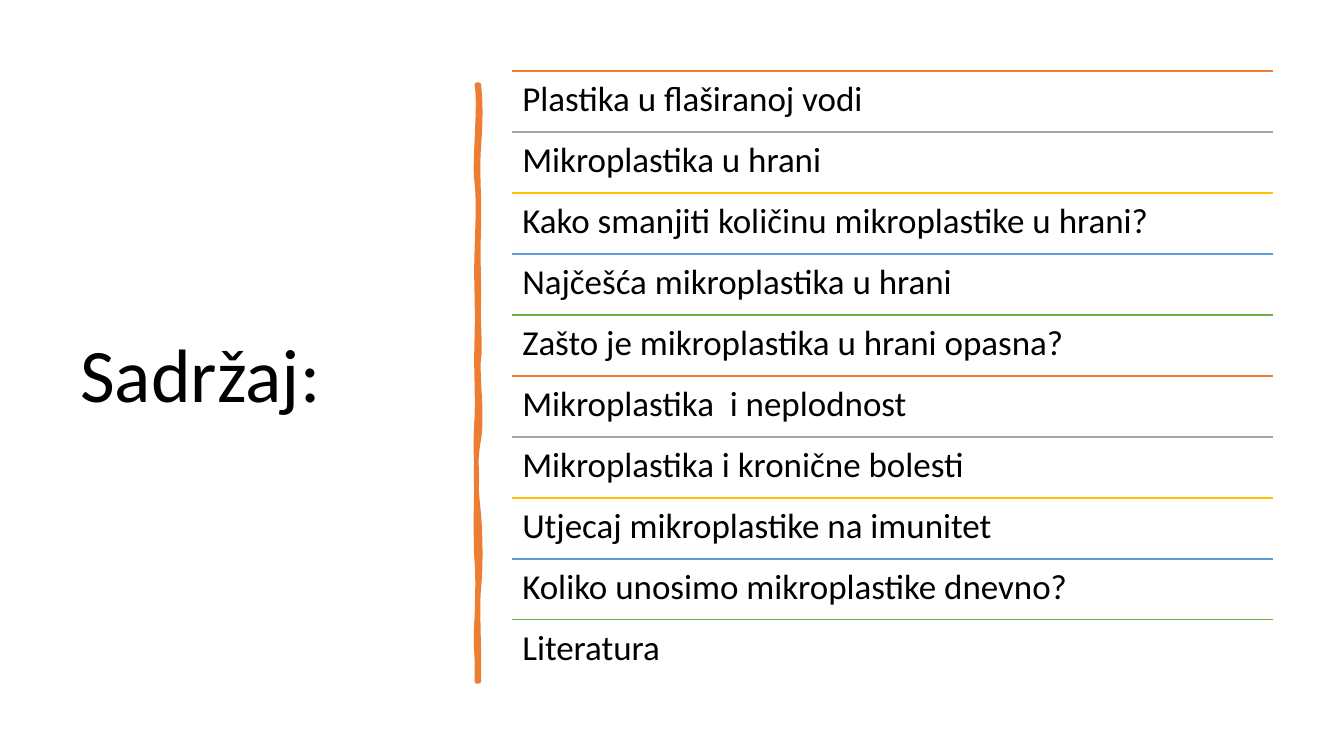
from lxml import etree
from pptx import Presentation
from pptx.dml.color import RGBColor
from pptx.enum.shapes import MSO_CONNECTOR
from pptx.enum.text import MSO_ANCHOR
from pptx.oxml.ns import qn
from pptx.util import Pt

STRAIGHT = MSO_CONNECTOR.STRAIGHT
TOP, MIDDLE = MSO_ANCHOR.TOP, MSO_ANCHOR.MIDDLE
BLACK = RGBColor(0x00, 0x00, 0x00)
ORANGE = RGBColor(0xED, 0x7D, 0x31)
GRAY = RGBColor(0xA5, 0xA5, 0xA5)
GOLD = RGBColor(0xFF, 0xC0, 0x00)
BLUE = RGBColor(0x5B, 0x9B, 0xD5)
GREEN = RGBColor(0x70, 0xAD, 0x47)
RULE_COLORS = [ORANGE, GRAY, GOLD, BLUE, GREEN]

TITLE = "Sadržaj:"
TOPICS = [
    "Plastika u flaširanoj vodi",
    "Mikroplastika u hrani",
    "Kako smanjiti količinu mikroplastike u hrani?",
    "Najčešća mikroplastika u hrani",
    "Zašto je mikroplastika u hrani opasna?",
    "Mikroplastika  i neplodnost",
    "Mikroplastika i kronične bolesti",
    "Utjecaj mikroplastike na imunitet",
    "Koliko unosimo mikroplastike dnevno?",
    "Literatura",
]

LIST_LEFT, LIST_TOP, LIST_W, ROW_H = 366, 50.7, 543.6, 43.56

BAR_START = (342, 60.5)
BAR_CURVES = [
    ((343.4, 73.4), (343.4, 85.7), (342, 105.1)),
    ((340.6, 124.6), (342.7, 140.4), (342, 162.7)),
    ((341.3, 185), (342, 188.6), (342, 211.7)),
    ((341.3, 234), (343.4, 246.2), (342, 256.3)),
    ((340.6, 266.4), (344.9, 298.1), (342, 313.9)),
    ((339.1, 329), (339.8, 348.5), (342, 367.2)),
    ((343.4, 385.9), (343.4, 406.1), (342, 420.5)),
    ((340.6, 434.2), (342.7, 468), (342, 486.7)),
    ((341.3, 486.7), (340.6, 486.7), (340.6, 486.7)),
    ((341.3, 465.1), (339.1, 463.7), (340.6, 441.4)),
    ((341.3, 419.8), (341.3, 410.4), (340.6, 401)),
    ((339.8, 391.7), (339.8, 356.4), (340.6, 343.4)),
    ((340.6, 330.5), (339.1, 320.4), (340.6, 298.8)),
    ((341.3, 277.9), (339.8, 268.6), (340.6, 241.2)),
    ((341.3, 214.6), (339.8, 202.3), (340.6, 180)),
    ((341.3, 157), (342, 144), (340.6, 130.3)),
    ((338.4, 117.4), (343.4, 74.9), (340.6, 60.5)),
    ((341.3, 60.5), (341.3, 60.5), (342, 60.5)),
]
UNITS_PER_PT = 100


def add_text(s, text, x, y, w, h, size, anchor=TOP, inset=7.2):
    tf = s.shapes.add_textbox(Pt(x), Pt(y), Pt(w), Pt(h)).text_frame
    tf.word_wrap = True
    tf.vertical_anchor = anchor
    tf.margin_left = tf.margin_right = Pt(7.2)
    tf.margin_top = tf.margin_bottom = Pt(inset)
    p = tf.paragraphs[0]
    p.line_spacing = 0.9
    r = p.add_run()
    r.text = text
    r.font.name = "Calibri"
    r.font.size = Pt(size)
    r.font.color.rgb = BLACK


def add_rule(s, x, y, w, color):
    line = s.shapes.add_connector(STRAIGHT, Pt(x), Pt(y), Pt(x + w), Pt(y))
    line.line.color.rgb = color
    line.line.width = Pt(1)
    etree.SubElement(line._element.spPr, qn("a:effectLst"))


def lines_to_curves(shape):
    segments = list(shape._element.iter(qn("a:lnTo")))
    for i in range(0, len(segments) - 2, 3):
        curve = etree.Element(qn("a:cubicBezTo"))
        segments[i].addprevious(curve)
        for segment in segments[i:i + 3]:
            curve.append(segment[0])
            segment.getparent().remove(segment)


def add_brush_bar(s):
    x, y = (v * UNITS_PER_PT for v in BAR_START)
    points = [(px * UNITS_PER_PT, py * UNITS_PER_PT) for curve in BAR_CURVES for px, py in curve]
    fb = s.shapes.build_freeform(x, y, scale=Pt(1 / UNITS_PER_PT))
    fb.add_line_segments(points, close=True)
    bar = fb.convert_to_shape()
    lines_to_curves(bar)
    bar.shadow.inherit = False
    bar.fill.solid()
    bar.fill.fore_color.rgb = ORANGE
    bar.line.color.rgb = ORANGE
    bar.line.width = Pt(3.25)


prs = Presentation()
prs.slide_width, prs.slide_height = Pt(960), Pt(540)
s = prs.slides.add_slide(prs.slide_layouts[6])

add_text(s, TITLE, 50.3, 50, 269, 440, 54, anchor=MIDDLE, inset=3.6)
add_brush_bar(s)
for i, topic in enumerate(TOPICS):
    y = LIST_TOP + i * ROW_H
    add_rule(s, LIST_LEFT, y, LIST_W, RULE_COLORS[i % len(RULE_COLORS)])
    add_text(s, topic, LIST_LEFT, y, LIST_W, ROW_H, 25)

prs.save("out.pptx")
